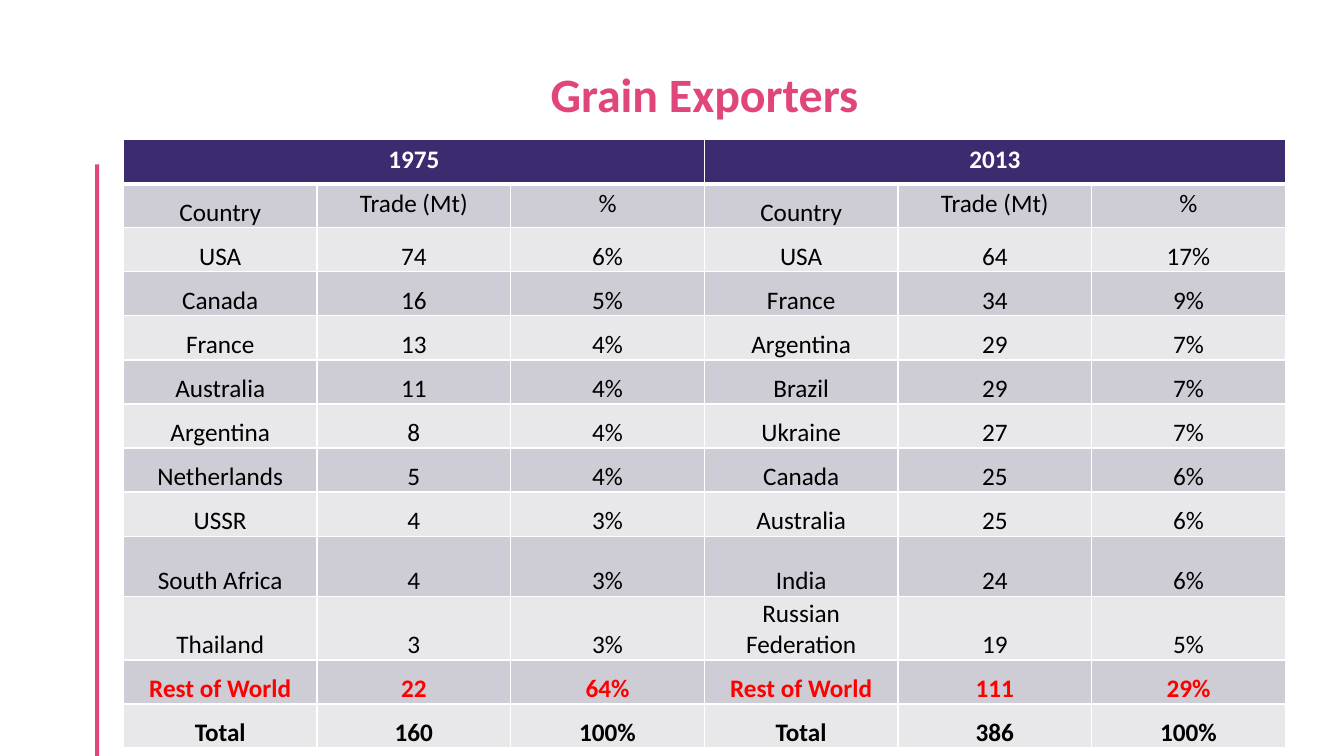
import pptx
import pptx.util
import pptx.dml.color
import pptx.enum.shapes
import pptx.enum.text
import pptx.oxml
import pptx.oxml.ns
from lxml import etree

Cm = pptx.util.Cm
Pt = pptx.util.Pt
RGBColor = pptx.dml.color.RGBColor

TITLE = "Grain Exporters"
YEARS = ("1975", "2013")
HEADINGS = ("Country", "Trade (Mt)", "%")
EXPORTERS = [
    ("USA", "74", "6%", "USA", "64", "17%"),
    ("Canada", "16", "5%", "France", "34", "9%"),
    ("France", "13", "4%", "Argentina", "29", "7%"),
    ("Australia", "11", "4%", "Brazil", "29", "7%"),
    ("Argentina", "8", "4%", "Ukraine", "27", "7%"),
    ("Netherlands", "5", "4%", "Canada", "25", "6%"),
    ("USSR", "4", "3%", "Australia", "25", "6%"),
    ("South Africa", "4", "3%", "India", "24", "6%"),
    ("Thailand", "3", "3%", "Russian Federation", "19", "5%"),
    ("Rest of World", "22", "64%", "Rest of World", "111", "29%"),
    ("Total", "160", "100%", "Total", "386", "100%"),
]

FONT = "Calibri"
PINK = RGBColor(0xE0, 0x45, 0x7B)
PURPLE = RGBColor(0x3C, 0x2B, 0x6E)
DARK_BAND = RGBColor(0xCE, 0xCD, 0xD5)
LIGHT_BAND = RGBColor(0xE8, 0xE8, 0xEB)
WHITE = RGBColor(0xFF, 0xFF, 0xFF)
BLACK = RGBColor(0, 0, 0)
RED = RGBColor(0xFF, 0, 0)

COL_W = Cm(4.88)
ROW_H = Cm(1.11)
TALL_ROWS = {"South Africa": Cm(1.52), "Thailand": Cm(1.6)}


def write(tf, text, size, color, bold):
    tf.text = text
    p = tf.paragraphs[0]
    p.alignment = pptx.enum.text.PP_ALIGN.CENTER
    font = p.runs[0].font
    font.name, font.size, font.bold = FONT, Pt(size), bold
    font.color.rgb = color
    return p


def set_borders(cell, bottom):
    tc_pr = cell._tc.get_or_add_tcPr()
    for i, side in enumerate(("lnL", "lnR", "lnT", "lnB")):
        ln = etree.Element(pptx.oxml.ns.qn("a:" + side))
        ln.set("w", str(Pt(bottom if side == "lnB" else 1)))
        fill = etree.SubElement(ln, pptx.oxml.ns.qn("a:solidFill"))
        etree.SubElement(fill, pptx.oxml.ns.qn("a:srgbClr")).set("val", str(WHITE))
        tc_pr.insert(i, ln)


def format_cell(cell, fill, bottom=1):
    cell.fill.solid()
    cell.fill.fore_color.rgb = fill
    set_borders(cell, bottom)


def sit_low(cell):
    cell.vertical_anchor = pptx.enum.text.MSO_ANCHOR.BOTTOM
    cell.margin_left = cell.margin_right = cell.margin_top = Cm(0.03)
    cell.margin_bottom = 0


prs = pptx.Presentation()
prs.slide_width, prs.slide_height = Cm(33.87), Cm(19.05)
s = prs.slides.add_slide(prs.slide_layouts[6])

bar = s.shapes.add_shape(pptx.enum.shapes.MSO_SHAPE.RECTANGLE,
                         Cm(2.4), Cm(4.14), Cm(0.1), Cm(14.91))
bar.shadow.inherit = False
bar.fill.solid()
bar.fill.fore_color.rgb = PINK
bar.line.fill.background()

title = s.shapes.add_textbox(Cm(3.58), Cm(1.8), Cm(28.35), Cm(1.17))
tf = title.text_frame
tf.word_wrap = True
tf.margin_left = tf.margin_right = tf.margin_top = tf.margin_bottom = 0
write(tf, TITLE, 34.2, PINK, True).line_spacing = 0.9

rows = [HEADINGS * len(YEARS)] + EXPORTERS
n_cols = len(rows[0])
heights = [ROW_H] + [TALL_ROWS.get(row[0], ROW_H) for row in rows]
table = s.shapes.add_table(len(heights), n_cols, Cm(3.11), Cm(3.52),
                           COL_W * n_cols, sum(heights)).table
for col in table.columns:
    col.width = COL_W
for row, height in zip(table.rows, heights):
    row.height = height

for c in range(n_cols):
    format_cell(table.cell(0, c), PURPLE, 3)
for i, year in enumerate(YEARS):
    first = i * len(HEADINGS)
    cell = table.cell(0, first)
    cell.merge(table.cell(0, first + len(HEADINGS) - 1))
    write(cell.text_frame, year, 18, WHITE, True)

for r, row in enumerate(rows, start=1):
    color = RED if row[0] == "Rest of World" else BLACK
    bold = row[0] in ("Rest of World", "Total")
    for c, text in enumerate(row):
        cell = table.cell(r, c)
        write(cell.text_frame, text, 18, color, bold)
        format_cell(cell, DARK_BAND if r % 2 else LIGHT_BAND)
        if r > 1 or text == "Country":
            sit_low(cell)

prs.save("out.pptx")
